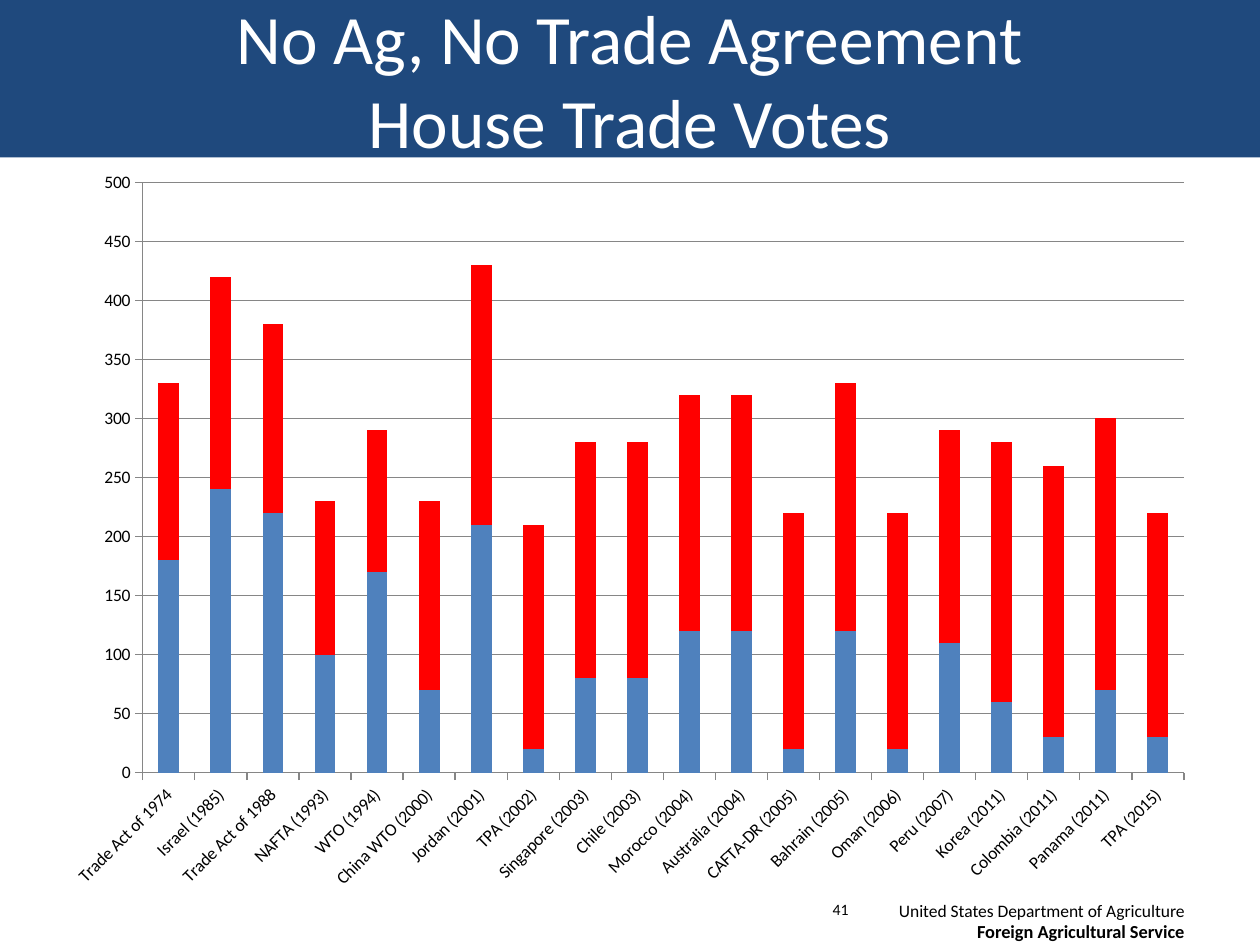
from pptx import Presentation
from pptx.chart.data import CategoryChartData
from pptx.dml.color import RGBColor
from pptx.enum.chart import XL_CHART_TYPE, XL_TICK_MARK
from pptx.enum.shapes import MSO_SHAPE
from pptx.enum.text import MSO_ANCHOR, PP_ALIGN
from pptx.util import Inches, Pt

STACKED = XL_CHART_TYPE.COLUMN_STACKED
OUTSIDE = XL_TICK_MARK.OUTSIDE
MIDDLE = MSO_ANCHOR.MIDDLE
LEFT, CENTER, RIGHT = PP_ALIGN.LEFT, PP_ALIGN.CENTER, PP_ALIGN.RIGHT

FONT = "Calibri"
COLORS = {"banner": "1F497D", "white": "FFFFFF", "black": "000000",
          "lower": "4F81BD", "upper": "FF0000", "grid": "868686"}

TITLE = "No Ag, No Trade Agreement\vHouse Trade Votes"
PAGE_NUMBER = "41"
AGENCY = [("United States Department of Agriculture", 10, False),
          ("Foreign Agricultural Service", 10.5, True)]
VOTES = [  # agreement, lower segment, upper segment
    ("Trade Act of 1974", 180, 150),
    ("Israel (1985)", 240, 180),
    ("Trade Act of 1988", 220, 160),
    ("NAFTA (1993)", 100, 130),
    ("WTO (1994)", 170, 120),
    ("China WTO (2000)", 70, 160),
    ("Jordan (2001)", 210, 220),
    ("TPA (2002)", 20, 190),
    ("Singapore (2003)", 80, 200),
    ("Chile (2003)", 80, 200),
    ("Morocco (2004)", 120, 200),
    ("Australia (2004)", 120, 200),
    ("CAFTA-DR (2005)", 20, 200),
    ("Bahrain (2005)", 120, 210),
    ("Oman (2006)", 20, 200),
    ("Peru (2007)", 110, 180),
    ("Korea (2011)", 60, 220),
    ("Colombia (2011)", 30, 230),
    ("Panama (2011)", 70, 230),
    ("TPA (2015)", 30, 190),
]

WIDTH, HEIGHT = 10, 7.5
BANNER_HEIGHT = HEIGHT / 6
FOOTER_TOP = 7.09
LABEL_ANGLE = -45


def color(name):
    return RGBColor.from_string(COLORS[name])


def write(para, text, size, bold=False, tone="black", align=LEFT):
    para.text = text
    para.alignment = align
    para.font.name = FONT
    para.font.size = Pt(size)
    para.font.bold = bold
    para.font.color.rgb = color(tone)


def add_box(page, left, top, width, height):
    box = page.shapes.add_textbox(*map(Inches, (left, top, width, height)))
    box.text_frame.word_wrap = True
    return box.text_frame


def add_banner(page):
    banner = page.shapes.add_shape(MSO_SHAPE.RECTANGLE, 0, 0,
                                   Inches(WIDTH), Inches(BANNER_HEIGHT))
    banner.shadow.inherit = False
    banner.fill.solid()
    banner.fill.fore_color.rgb = color("banner")
    banner.line.fill.background()
    banner.text_frame.word_wrap = True
    banner.text_frame.vertical_anchor = MIDDLE
    write(banner.text_frame.paragraphs[0], TITLE, 39.6, tone="white", align=CENTER)


def add_vote_chart(page):
    names, lower, upper = zip(*VOTES)
    data = CategoryChartData(number_format="0")
    data.categories = names
    data.add_series("Series 1", lower)
    data.add_series("Series 2", upper)
    frame = page.shapes.add_chart(STACKED, Inches(0.41), Inches(BANNER_HEIGHT),
                                  Inches(9.17), Inches(5.92), data)
    chart = frame.chart
    chart.has_legend = False
    chart.has_title = False
    chart.font.name = FONT
    chart.font.size = Pt(10)
    chart.font.color.rgb = color("black")

    plot = chart.plots[0]
    plot.gap_width = 150
    plot.overlap = 100
    plot.vary_by_categories = False
    for series, tone in zip(plot.series, ("lower", "upper")):
        series.format.fill.solid()
        series.format.fill.fore_color.rgb = color(tone)

    values, agreements = chart.value_axis, chart.category_axis
    values.minimum_scale, values.maximum_scale, values.major_unit = 0, 500, 50
    values.has_major_gridlines = True
    values.tick_labels.number_format = "0"
    values.tick_labels.number_format_is_linked = False
    for axis in (values, agreements):
        axis.major_tick_mark = OUTSIDE
    for part in (values, agreements, values.major_gridlines):
        part.format.line.color.rgb = color("grid")
        part.format.line.width = Pt(0.75)

    agreements.tick_labels.font.size = Pt(10)
    label_body = agreements._element.txPr.bodyPr
    label_body.set("rot", str(LABEL_ANGLE * 60000))
    label_body.set("vert", "horz")


def add_footer(page):
    number = add_box(page, 6.51, FOOTER_TOP, 0.42, 0.4)
    write(number.paragraphs[0], PAGE_NUMBER, 9)
    agency = add_box(page, 6.92, FOOTER_TOP, 2.58, 0.45)
    for index, (text, size, bold) in enumerate(AGENCY):
        para = agency.add_paragraph() if index else agency.paragraphs[0]
        write(para, text, size, bold=bold, align=RIGHT)


def main():
    deck = Presentation()
    deck.slide_width, deck.slide_height = Inches(WIDTH), Inches(HEIGHT)
    page = deck.slides.add_slide(deck.slide_layouts[6])
    add_banner(page)
    add_vote_chart(page)
    add_footer(page)
    deck.save("out.pptx")


if __name__ == "__main__":
    main()
